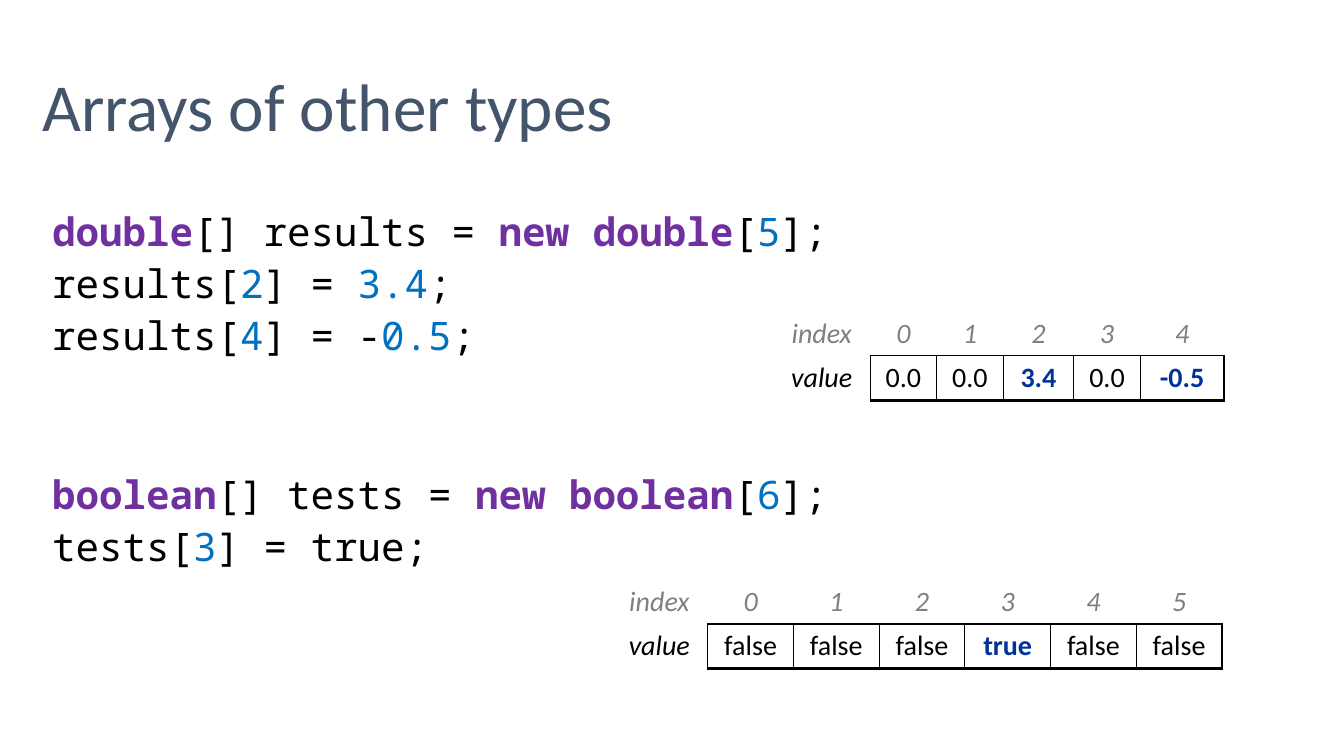
"""Build the slide 'Arrays of other types' with two code samples and their arrays."""
from lxml import etree
from pptx import Presentation, util as u
from pptx.dml.color import RGBColor
from pptx.enum import text
from pptx.oxml import ns

SLATE = RGBColor(0x44, 0x54, 0x6A)
PURPLE = RGBColor(0x70, 0x30, 0xA0)
BLUE = RGBColor(0x00, 0x70, 0xC0)
NAVY = RGBColor(0x00, 0x33, 0x99)
GRAY = RGBColor(0x80, 0x80, 0x80)
BLACK = RGBColor(0x00, 0x00, 0x00)


def add_run(paragraph, wording, size, font, color, bold=False, italic=False):
    run = paragraph.add_run()
    run.text = wording
    run.font.size = u.Pt(size)
    run.font.name = font
    run.font.color.rgb = color
    run.font.bold = bold
    run.font.italic = italic


def add_border(cell, side, points):
    line = etree.SubElement(cell._tc.get_or_add_tcPr(), ns.qn(f"a:ln{side}"), w=str(u.Pt(points)))
    fill = etree.SubElement(line, ns.qn("a:solidFill"))
    etree.SubElement(fill, ns.qn("a:srgbClr"), val=str(BLACK))


deck = Presentation()
deck.slide_width = u.Inches(13.33)
deck.slide_height = u.Inches(7.5)
slide = deck.slides.add_slide(deck.slide_layouts[6])

heading = slide.shapes.add_textbox(u.Inches(0.42), 0, u.Inches(12.5), u.Inches(1.45)).text_frame
heading.word_wrap = True
heading.vertical_anchor = text.MSO_ANCHOR.BOTTOM
heading.margin_left = heading.margin_right = heading.margin_bottom = 0
heading.paragraphs[0].line_spacing = 0.9
add_run(heading.paragraphs[0], "Arrays of other types", 48, "Calibri", SLATE)

code_lines = [
    (0, [("double", PURPLE), ("[] results = ", BLACK), ("new double", PURPLE),
         ("[", BLACK), ("5", BLUE), ("];", BLACK)]),
    (0, [("results[", BLACK), ("2", BLUE), ("] = ", BLACK), ("3.4", BLUE), (";", BLACK)]),
    (0, [("results[", BLACK), ("4", BLUE), ("] = -", BLACK), ("0.5", BLUE), (";", BLACK)]),
    (77, [("boolean", PURPLE), ("[] tests = ", BLACK), ("new boolean", PURPLE),
          ("[", BLACK), ("6", BLUE), ("];", BLACK)]),
    (0, [("tests[", BLACK), ("3", BLUE), ("] = true;", BLACK)]),
]
code = slide.shapes.add_textbox(
    u.Inches(0.42), u.Inches(1.45), u.Inches(12.5), u.Inches(5.66)).text_frame
code.word_wrap = True
code.margin_top = u.Inches(0.56)
for number, (gap, pieces) in enumerate(code_lines):
    paragraph = code.add_paragraph() if number else code.paragraphs[0]
    paragraph.line_spacing = u.Pt(37)
    paragraph.space_before = u.Pt(gap)
    for wording, color in pieces:
        add_run(paragraph, wording, 28, "Noto Sans Mono", color, bold=color == PURPLE)

ROW_HEIGHT = 0.44
arrays = [
    (7.67, 3.09, [0.96, 0.66, 0.66, 0.7, 0.66, 0.83],
     ["0.0", "0.0", "3.4", "0.0", "-0.5"], {"3.4", "-0.5"}),
    (6.06, 5.75, [0.96] + [0.85] * 6,
     ["false", "false", "false", "true", "false", "false"], {"true"}),
]
for left, top, widths, values, assigned in arrays:
    array = slide.shapes.add_table(
        2, len(widths), u.Inches(left), u.Inches(top),
        u.Inches(sum(widths)), u.Inches(2 * ROW_HEIGHT)).table
    array.first_row = array.horz_banding = False
    for row in array.rows:
        row.height = u.Inches(ROW_HEIGHT)
    last = len(values)
    indexes = [str(index) for index in range(last)]
    for column, width in enumerate(widths):
        array.columns[column].width = u.Inches(width)
        index_cell, value_cell = array.cell(0, column), array.cell(1, column)
        index_text = (["index"] + indexes)[column]
        value_text = (["value"] + values)[column]
        is_set = value_text in assigned
        add_run(index_cell.text_frame.paragraphs[0], index_text, 20, "Calibri", GRAY, italic=True)
        add_run(value_cell.text_frame.paragraphs[0], value_text, 20, "Calibri",
                NAVY if is_set else BLACK, bold=is_set, italic=column == 0)
        if column:
            add_border(index_cell, "B", 1)
            for side, points in (("L", 1), ("R", 2.25 if column == last else 1),
                                 ("T", 1), ("B", 2.25)):
                add_border(value_cell, side, points)
        else:
            add_border(value_cell, "R", 1)
        for cell in (index_cell, value_cell):
            cell.fill.background()
            cell.text_frame.paragraphs[0].alignment = text.PP_ALIGN.CENTER

deck.save("out.pptx")
